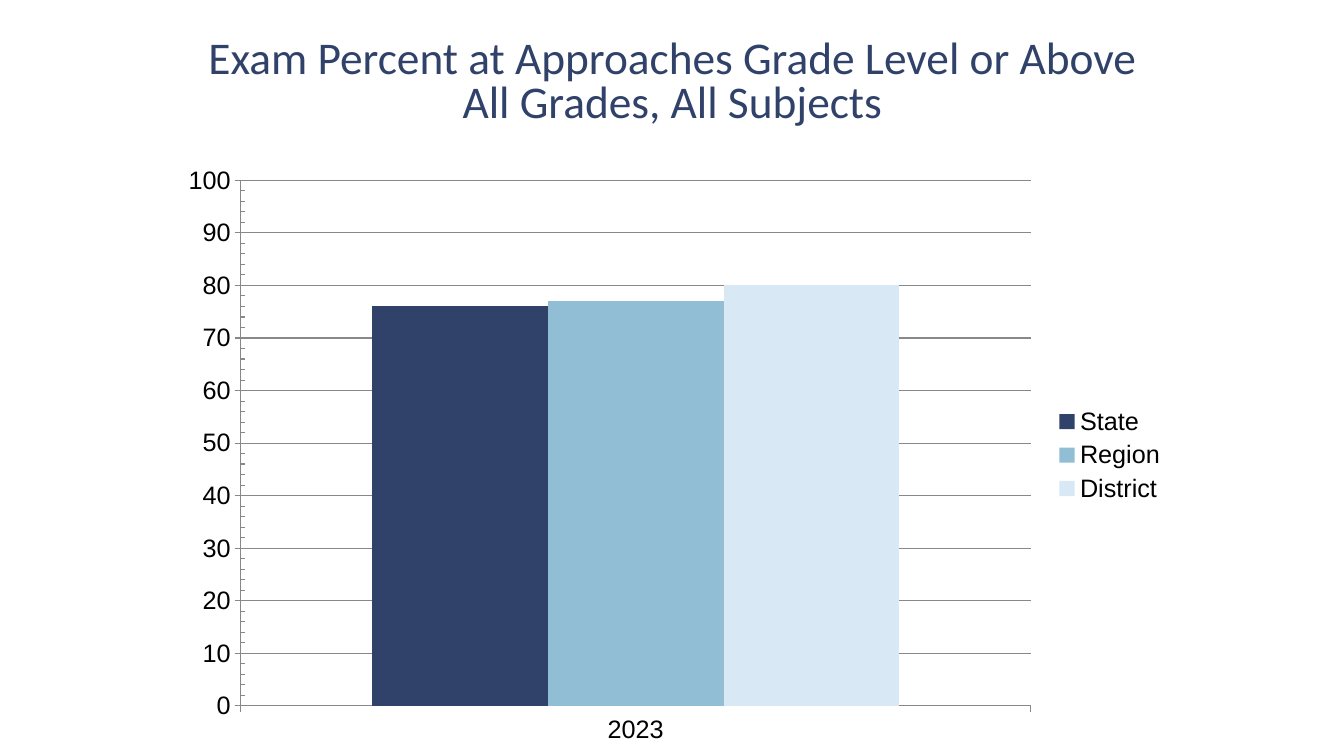
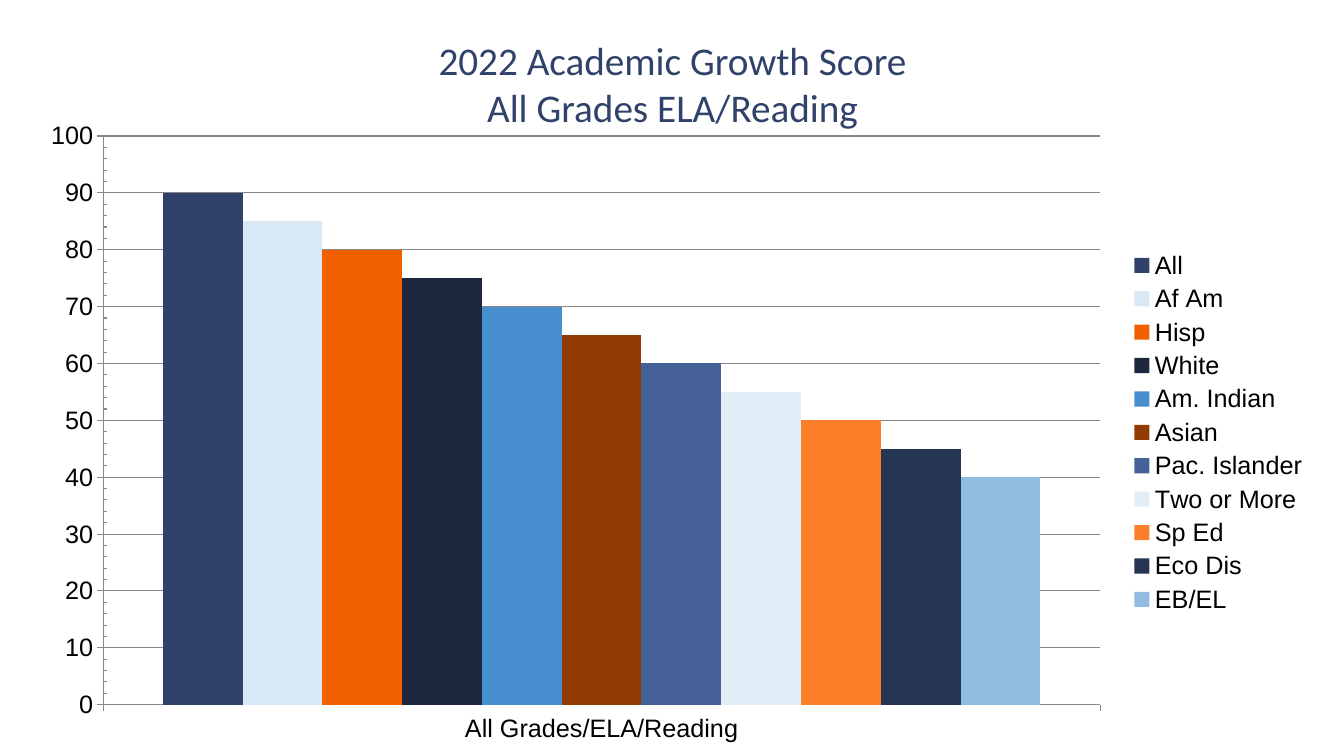
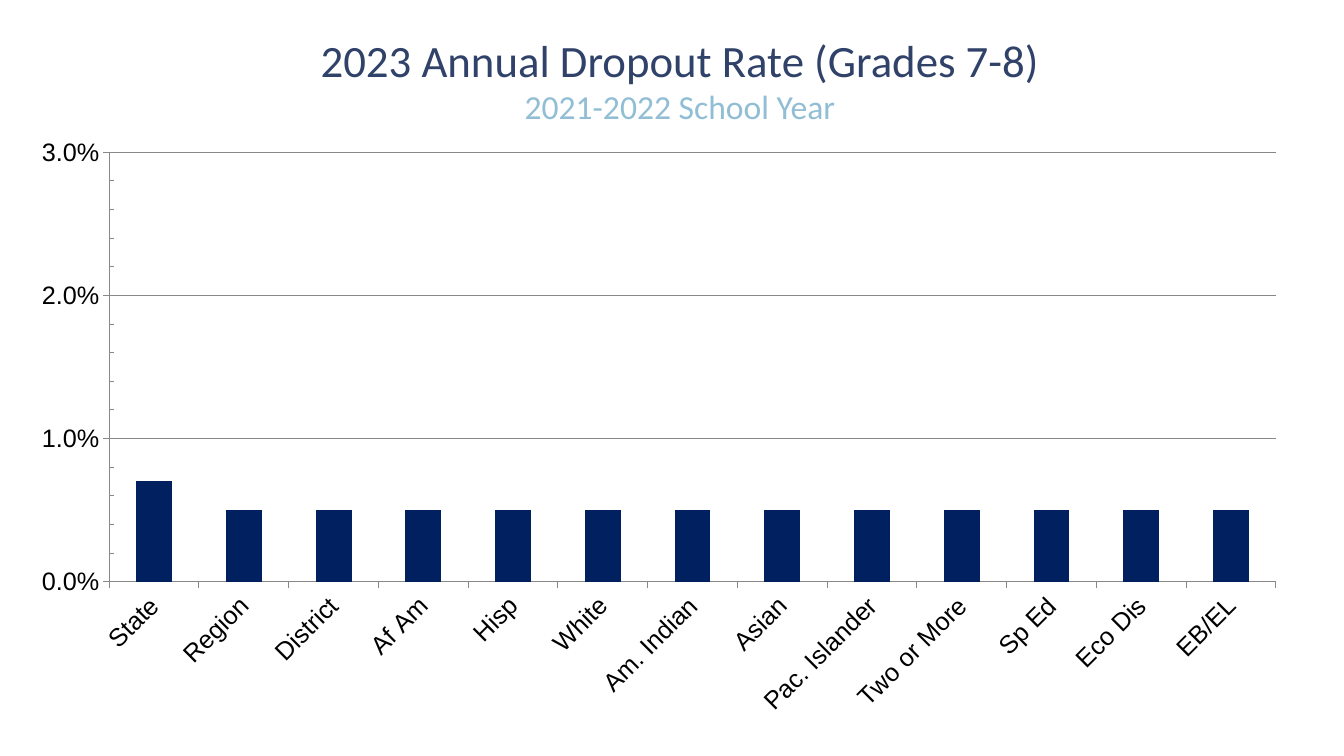
from pptx import Presentation
from pptx.chart.data import CategoryChartData as ChartData
from pptx.dml.color import RGBColor as RGB
from pptx.enum.chart import XL_CHART_TYPE as Kind, XL_LEGEND_POSITION as Side, XL_TICK_MARK as Tick
from pptx.enum.text import MSO_ANCHOR as Anchor, PP_ALIGN as Align
from pptx.util import Inches, Pt

# Shared colours and fonts
NAVY = RGB(0x30, 0x42, 0x69)
SKY = RGB(0x91, 0xBE, 0xD4)
PALE = RGB(0xD9, 0xE8, 0xF5)
INK = RGB(0x00, 0x20, 0x60)
GRAY = RGB(0x88, 0x88, 0x88)
BLACK = RGB(0, 0, 0)
TITLE_FONT = "Calibri"
CHART_FONT = "Arial"
TITLE_BOX = (1.67, 0.33, 10, 1)

# Student groups with their growth score and colour
GROUPS = [
    ("Af Am", 85, PALE),
    ("Hisp", 80, RGB(0xF2, 0x61, 0x01)),
    ("White", 75, RGB(0x1D, 0x28, 0x3F)),
    ("Am. Indian", 70, RGB(0x47, 0x8F, 0xCF)),
    ("Asian", 65, RGB(0x91, 0x3A, 0x01)),
    ("Pac. Islander", 60, RGB(0x46, 0x61, 0x9A)),
    ("Two or More", 55, RGB(0xE1, 0xED, 0xF7)),
    ("Sp Ed", 50, RGB(0xFE, 0x7F, 0x2A)),
    ("Eco Dis", 45, RGB(0x26, 0x35, 0x54)),
    ("EB/EL", 40, RGB(0x90, 0xBC, 0xE2)),
]


def add_title(slide, lines, box=TITLE_BOX, space=1.0):
    """Write centred title lines, each given as (text, size, colour)."""
    frame = slide.shapes.add_textbox(*map(Inches, box)).text_frame
    frame.word_wrap = True
    frame.vertical_anchor = Anchor.MIDDLE
    for i, (text, size, color) in enumerate(lines):
        para = frame.add_paragraph() if i else frame.paragraphs[0]
        para.text = text
        para.alignment = Align.CENTER
        para.line_spacing = space
        font = para.font
        font.name, font.size, font.color.rgb = TITLE_FONT, Pt(size), color


def style_line(line):
    line.color.rgb = GRAY
    line.width = Pt(0.75)


def style_axes(chart, top, step, form):
    cat, val = chart.category_axis, chart.value_axis
    for axis in (cat, val):
        axis.major_tick_mark = Tick.OUTSIDE
        style_line(axis.format.line)
    cat.minor_tick_mark = Tick.NONE
    val.minor_tick_mark = Tick.INSIDE
    val.minimum_scale, val.maximum_scale = 0, top
    val.major_unit, val.minor_unit = step, step / 5
    val.has_major_gridlines = True
    style_line(val.major_gridlines.format.line)
    val.tick_labels.number_format = form
    val.tick_labels.number_format_is_linked = False


def add_columns(slide, box, cats, series, top=100, step=10, form="General"):
    """Draw clustered columns; series are (name, values, colour)."""
    data = ChartData()
    data.categories = cats
    for name, vals, _ in series:
        data.add_series(name, vals)
    chart = slide.shapes.add_chart(
        Kind.COLUMN_CLUSTERED, *map(Inches, box), data).chart
    chart.has_title = False
    font = chart.font
    font.name, font.size, font.color.rgb = CHART_FONT, Pt(18), BLACK
    style_axes(chart, top, step, form)
    plot = chart.plots[0]
    plot.gap_width = 150
    plot.vary_by_categories = False
    for bar, (_, _, color) in zip(plot.series, series):
        bar.format.fill.solid()
        bar.format.fill.fore_color.rgb = color
    chart.has_legend = len(series) > 1
    if chart.has_legend:
        chart.legend.position = Side.RIGHT
        chart.legend.include_in_layout = False
    return chart


def exam_slide(slide):
    add_columns(slide, (1.67, 1.53, 10, 5.97), ["2023"], [
        ("State", [76], NAVY), ("Region", [77], SKY), ("District", [80], PALE)])
    add_title(slide, [
        ("Exam Percent at Approaches Grade Level or Above", 32.4, NAVY),
        ("All Grades, All Subjects", 32.4, NAVY)], space=0.8)


def growth_slide(slide):
    bars = [(name, [val], color) for name, val, color in [("All", 90, NAVY)] + GROUPS]
    add_columns(slide, (0.25, 1.08, 12.83, 6.42), ["All Grades/ELA/Reading"], bars)
    add_title(slide, [
        ("2022 Academic Growth Score", 28, NAVY),
        ("All Grades ELA/Reading", 28, NAVY)])


def dropout_slide(slide):
    cats = ["State", "Region", "District"] + [group[0] for group in GROUPS]
    rates = [0.007] + [0.005] * (len(cats) - 1)
    chart = add_columns(slide, (0.16, 1.25, 12.75, 5.97), cats,
                        [("Series 1", rates, INK)], 0.03, 0.01, "0.0%")
    # Slant the category labels by 45 degrees
    labels = chart.category_axis.tick_labels.font
    labels.size = Pt(18)
    chart.category_axis._element.txPr.bodyPr.set("rot", str(-45 * 60000))
    add_title(slide, [
        ("2023 Annual Dropout Rate (Grades 7-8)", 32, NAVY),
        ("2021-2022 School Year", 24, SKY)], (2.08, 0.27, 9.33, 1.04))


def main():
    deck = Presentation()
    deck.slide_width, deck.slide_height = Inches(13.33), Inches(7.5)
    blank = deck.slide_layouts[6]
    for build in (exam_slide, growth_slide, dropout_slide):
        build(deck.slides.add_slide(blank))
    deck.save("out.pptx")


if __name__ == "__main__":
    main()
